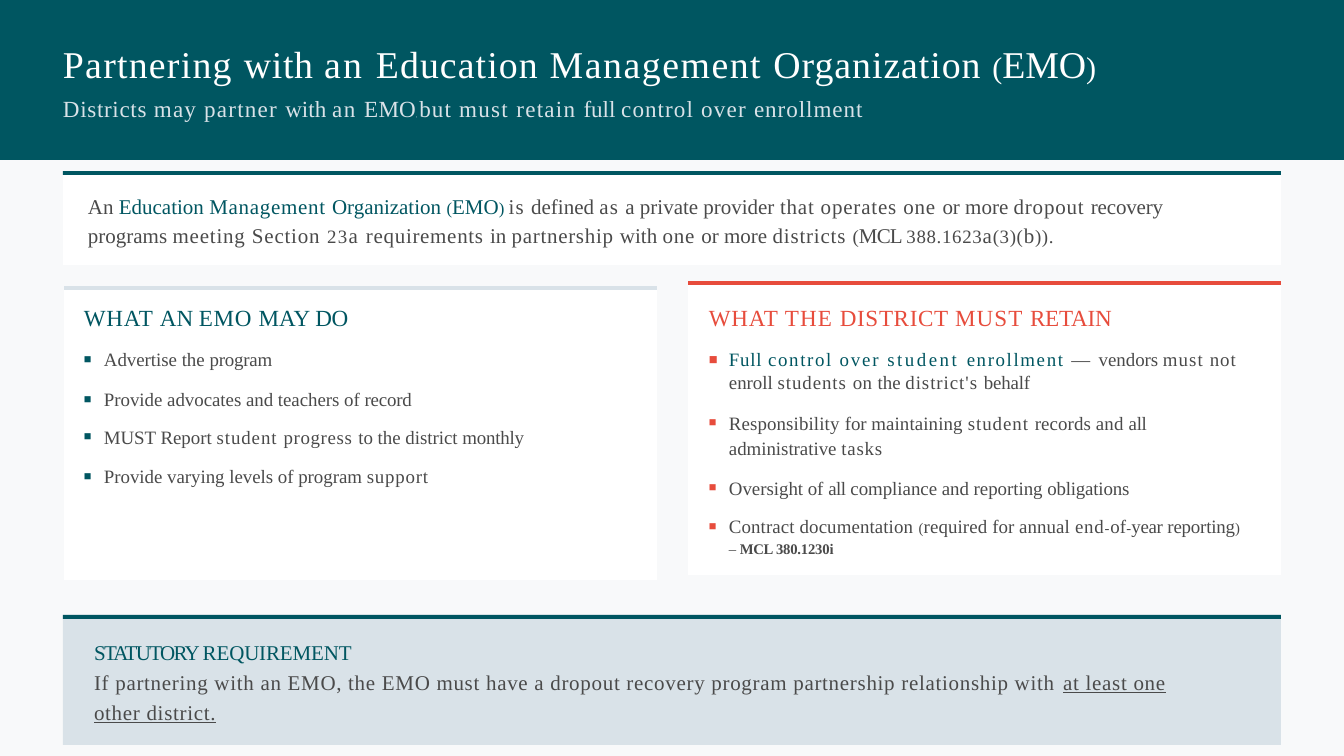
import pptx
import pptx.dml.color
import pptx.enum.shapes
import pptx.enum.text
import pptx.oxml
import pptx.oxml.ns
import pptx.util

RGB = pptx.dml.color.RGBColor
TEAL = RGB(0x00, 0x56, 0x61)
WHITE = RGB(0xFF, 0xFF, 0xFF)
PALE = RGB(0xF8, 0xF9, 0xFA)
MIST = RGB(0xD9, 0xE2, 0xE8)
RED = RGB(0xE7, 0x4C, 0x3C)
GREY = RGB(0x4A, 0x4A, 0x4A)

PX = 914400 / 100.8
WIDTH, HEIGHT = 1344, 756
HEADER_HEIGHT = 160
ACCENT_HEIGHT = 4
BULLET_INDENT = 20
FONT = "Times New Roman"

# Each span is (text, letter spacing in points, format values that differ).
TITLE = [
    ("Partnering ", 0.9), ("with ", 0.5), ("an ", 1.6), ("Education ", 0.8),
    ("Management ", 1.1), ("Organization ", 0.7), ("(", -0.1, {"size": 21.5}),
    ("EMO", -0.1), (")", -0.1, {"size": 21.5}),
]
SUBTITLE = [
    ("Districts ", 0.5), ("may partner ", 0.9), ("with ", 0), ("an ", 1.1),
    ("E", 0.2), ("M", 0.1), ("O", -0.8), (", ", 0.3, {"size": 4}),
    ("but ", 0.8), ("must ", 1), ("retain ", 0.9), ("full ", 0),
    ("control ", 0.8), ("over ", 0.9), ("enrollment", 0.7),
]
DEFINITION = [
    ("An ", 0), ("Education ", 0, {"color": TEAL}),
    ("Management ", 0.5, {"color": TEAL}), ("Organization ", 0, {"color": TEAL}),
    ("(", 0, {"color": TEAL, "size": 12}), ("EMO", 0, {"color": TEAL}),
    (") ", 0, {"color": TEAL, "size": 12}), ("is ", 0.8), ("defined ", 0),
    ("as ", 0.8), ("a private provider ", 0), ("that operates one ", 0.6),
    ("or more ", 0), ("dropout ", 0.6), ("recovery ", -0.1), ("programs ", 0),
    ("meeting Section ", 0.6), ("23", 1, {"size": 13.5}), ("a ", 1),
    ("requirements ", 0.5), ("in ", 0), ("partnership ", 0.5), ("with ", 0),
    ("one ", 0.6), ("or more ", 0), ("districts ", 0.6),
    ("(", -0.6, {"size": 13.5}), ("MCL ", -0.6),
    ("388.1623", 0.5, {"size": 13.5}), ("a", 0.5), ("(3)(", 0.5, {"size": 13.5}),
    ("b", 0.5), (")).", 0.5, {"size": 13.5}),
]
MAY_DO = [("WHAT ", 0.6), ("AN ", 0), ("EMO ", 0.5), ("MAY ", 0), ("DO", -0.2)]
MUST_RETAIN = [("WHAT ", 0.6), ("THE ", 0.8), ("DISTRICT ", 0.5), ("MUST ", 0.8),
               ("RETAIN", -0.1)]
# Each bullet is (space before, line spacing, spans).
MAY_DO_BULLETS = [
    (12.4, 1, [("Advertise the ", 0), ("program", -0.1)]),
    (12.4, 1, [("Provide advocates and teachers of ", 0), ("record", -0.1)]),
    (10.5, 1, [("MUST Report ", 0), ("student ", 0.7), ("progress ", 0.5),
               ("to the district ", 0), ("monthly", -0.1)]),
    (11.8, 1, [("Provide varying levels of program ", 0), ("support", 0.6)]),
]
MUST_RETAIN_BULLETS = [
    (12.4, 1, [
        ("Full ", 0.6, {"color": TEAL}), ("control ", 1.2, {"color": TEAL}),
        ("over ", 1.4, {"color": TEAL}), ("student ", 1.8, {"color": TEAL}),
        ("enrollment ", 1.2, {"color": TEAL}), ("— ", 1.4), ("vendors ", 0),
        ("must ", 0.8), ("not ", 0.7), ("enroll ", 0), ("students ", 0.7),
        ("on ", 0.3), ("the ", 0), ("district's ", 0.7), ("behalf", -0.1)]),
    (11, 1.11, [
        ("Responsibility ", 0.1), ("for ", 0), ("maintaining ", 0.1),
        ("student ", 0.7), ("records and ", 0.1), ("all ", -0.2),
        ("administrative ", 0), ("tasks", 0.6)]),
    (12.3, 1, [("Oversight of ", 0), ("all ", -0.3),
               ("compliance and reporting ", 0), ("obligations", -0.1)]),
    (9.8, 1.11, [
        ("Contract documentation ", 0.1), ("(", 0.1, {"size": 10.5}),
        ("required ", 0.1), ("for ", 0), ("annual ", 0.1), ("end", 0.6),
        ("-", 0.6, {"size": 10.5}), ("of", 0.1), ("-", 0.1, {"size": 10.5}),
        ("year ", -0.2), ("reporting", -0.1), (") – ", -0.1, {"size": 10.5}),
        ("MCL 380.1230i", -0.1, {"size": 10.5, "bold": True})]),
]
STATUTORY = [("STATUTORY ", -1.2), ("REQUIREMENT", -0.1)]
REQUIREMENT = [
    ("If partnering with an EMO, the EMO must have a dropout recovery program "
     "partnership relationship with ", 0.5),
    ("at least one other district.", 0.5, {"underline": True}),
]


def px(length):
    return pptx.util.Emu(round(length * PX))


def add_block(slide, left, top, width, height, color):
    block = slide.shapes.add_shape(pptx.enum.shapes.MSO_SHAPE.RECTANGLE,
                                   px(left), px(top), px(width), px(height))
    block.shadow.inherit = False
    block.fill.solid()
    block.fill.fore_color.rgb = color
    block.line.fill.background()


def add_card(slide, left, top, width, height, color, accent):
    """Draw a panel with a thin accent bar along its top edge."""
    add_block(slide, left, top, width, height, color)
    add_block(slide, left, top, width, ACCENT_HEIGHT, accent)


def add_text_frame(slide, left, top, width, height):
    box = slide.shapes.add_textbox(px(left), px(top), px(width), px(height))
    values = {"word_wrap": True, "margin_left": 0, "margin_right": 0,
              "margin_top": 0, "margin_bottom": 0,
              "vertical_anchor": pptx.enum.text.MSO_ANCHOR.TOP}
    for name, value in values.items():
        setattr(box.text_frame, name, value)
    return box.text_frame


def add_bullet_mark(para, color, percent):
    properties = para._p.get_or_add_pPr()
    properties.set("marL", str(px(BULLET_INDENT)))
    properties.set("indent", str(-px(BULLET_INDENT)))
    space = pptx.oxml.ns.nsdecls("a")
    for xml in (f'<a:buClr {space}><a:srgbClr val="{color}"/></a:buClr>',
                f'<a:buSzPct {space} val="{percent * 1000}"/>',
                f'<a:buFont {space} typeface="{FONT}"/>',
                f'<a:buChar {space} char="■"/>'):
        properties.append(pptx.oxml.parse_xml(xml))


def add_para(frame, spans, size, color, before=0, line=1):
    """Fill the frame's empty first paragraph, or append another one."""
    first = frame.paragraphs[0]
    para = frame.add_paragraph() if first.runs else first
    para.line_spacing = line
    if before:
        para.space_before = pptx.util.Pt(before)
    for text, spacing, *changes in spans:
        values = {"name": FONT, "size": size, "color": color}
        values.update(*changes)
        span = para.add_run()
        span.text = text
        span.font.color.rgb = values.pop("color")
        values["size"] = pptx.util.Pt(values["size"])
        for name, value in values.items():
            setattr(span.font, name, value)
        span._r.get_or_add_rPr().set("spc", str(round(spacing * 100)))
    return para


def add_list(slide, left, width, heading, bullets, color, first_percent):
    frame = add_text_frame(slide, left, 303, width, 260)
    add_para(frame, heading, 16.5, color)
    for index, (before, line, spans) in enumerate(bullets):
        para = add_para(frame, spans, 13.5, GREY, before, line)
        add_bullet_mark(para, color, 67 if index else first_percent)


def main():
    deck = pptx.Presentation()
    deck.slide_width, deck.slide_height = px(WIDTH), px(HEIGHT)
    slide = deck.slides.add_slide(deck.slide_layouts[6])

    add_block(slide, 0, HEADER_HEIGHT, WIDTH, HEIGHT - HEADER_HEIGHT, PALE)
    add_block(slide, 0, 0, WIDTH, HEADER_HEIGHT, TEAL)
    header = add_text_frame(slide, 63, 41, 1100, 79)
    add_para(header, TITLE, 27, WHITE)
    add_para(header, SUBTITLE, 16.5, MIST, before=6)

    add_card(slide, 63, 171, 1218, 94, WHITE, TEAL)
    definition = add_text_frame(slide, 88, 191, 1129, 58)
    add_para(definition, DEFINITION, 15, GREY, line=1.12)

    add_card(slide, 64, 286, 593, 294, WHITE, MIST)
    add_list(slide, 84, 532, MAY_DO, MAY_DO_BULLETS, TEAL, 67)
    add_card(slide, 688, 281, 593, 294, WHITE, RED)
    add_list(slide, 709, 532, MUST_RETAIN, MUST_RETAIN_BULLETS, RED, 78)

    add_card(slide, 63, 615, 1218, 130, MIST, TEAL)
    statutory = add_text_frame(slide, 94, 639, 1106, 84)
    add_para(statutory, STATUTORY, 15, TEAL)
    add_para(statutory, REQUIREMENT, 15, GREY, before=0.5, line=1.18)

    deck.save("out.pptx")


if __name__ == "__main__":
    main()
